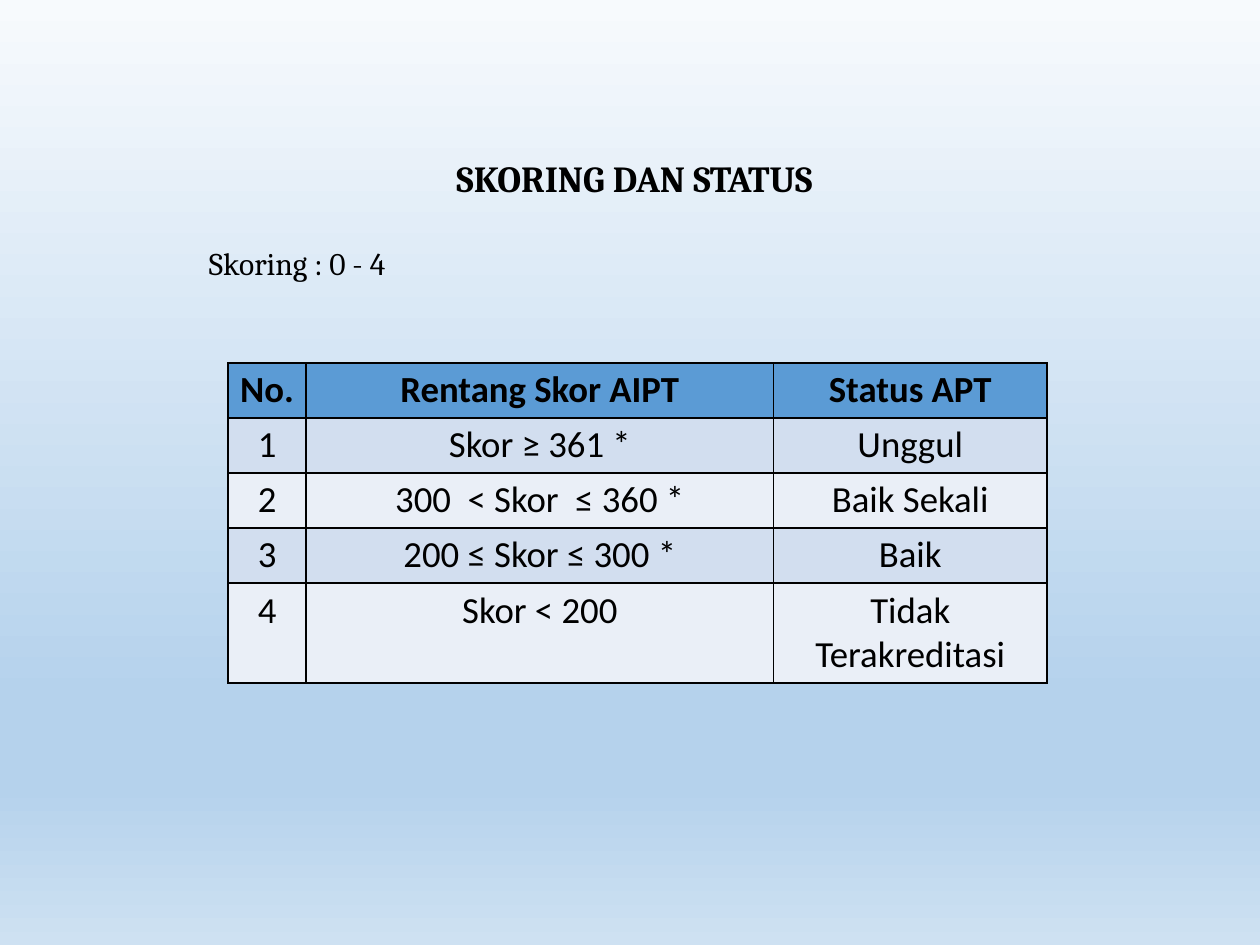
from typing import NamedTuple

from lxml import etree
from pptx import Presentation
from pptx.dml.color import RGBColor
from pptx.enum.text import MSO_AUTO_SIZE, PP_ALIGN
from pptx.oxml.ns import qn
from pptx.slide import Slide
from pptx.table import _Cell
from pptx.text.text import TextFrame
from pptx.util import Inches, Pt

LEFT, CENTER = PP_ALIGN.LEFT, PP_ALIGN.CENTER
FIT = MSO_AUTO_SIZE.SHAPE_TO_FIT_TEXT

BLACK = RGBColor(0x00, 0x00, 0x00)
BLUE = RGBColor(0x5B, 0x9B, 0xD5)
BANDS = (RGBColor(0xD2, 0xDE, 0xEF), RGBColor(0xEA, 0xEF, 0xF7))
SKY = RGBColor(0xB5, 0xD2, 0xEC)
STOPS = (
    (0, RGBColor(0xF7, 0xFA, 0xFD)),
    (74, SKY),
    (83, SKY),
    (100, RGBColor(0xCE, 0xE1, 0xF2)),
)

WIDTHS = (0.62, 3.71, 2.17)
HEIGHTS = (0.42, 0.42, 0.42, 0.42, 0.78)
ROWS = (
    ("No.", "Rentang Skor AIPT", "Status APT"),
    ("1", "Skor ≥ 361 *", "Unggul"),
    ("2", "300  < Skor  ≤ 360 *", "Baik Sekali"),
    ("3", "200 ≤ Skor ≤ 300 *", "Baik"),
    ("4", "Skor < 200", "Tidak Terakreditasi"),
)


class Label(NamedTuple):
    text: str
    left: float
    top: float
    width: float
    height: float
    size: float
    bold: bool
    align: PP_ALIGN


LABELS = (
    Label("Skoring : 0 - 4", 1.56, 1.89, 7, 0.4, 18, False, LEFT),
    Label("SKORING DAN STATUS", 1.44, 1.19, 7.19, 0.45, 21, True, CENTER),
)


def write(frame: TextFrame, text: str, *, font: str, size: float = 21,
          bold: bool = False, align: PP_ALIGN = CENTER) -> None:
    para = frame.paragraphs[0]
    para.alignment = align
    run = para.add_run()
    run.text = text
    run.font.name = font
    run.font.size = Pt(size)
    run.font.bold = bold
    run.font.color.rgb = BLACK


def add_color(parent: etree._Element, color: RGBColor) -> None:
    etree.SubElement(parent, qn("a:srgbClr"), val=str(color))


def paint_back(slide: Slide) -> None:
    fill = slide.background.fill
    fill.gradient()
    fill.gradient_angle = 270
    stops = slide.element.find(".//" + qn("a:gsLst"))
    for old in list(stops):
        stops.remove(old)
    for place, color in STOPS:
        add_color(etree.SubElement(stops, qn("a:gs"), pos=str(place * 1000)), color)


def set_border(cell: _Cell) -> None:
    """Rule all four sides; the lines must come before the cell's fill."""
    props = cell._tc.get_or_add_tcPr()
    for index, side in enumerate(("lnL", "lnR", "lnT", "lnB")):
        line = etree.Element(qn(f"a:{side}"), w=str(Pt(1)))
        add_color(etree.SubElement(line, qn("a:solidFill")), BLACK)
        props.insert(index, line)


def draw_table(slide: Slide) -> None:
    table = slide.shapes.add_table(
        len(ROWS), len(WIDTHS), Inches(1.81), Inches(2.88),
        Inches(sum(WIDTHS)), Inches(sum(HEIGHTS))).table
    for col, width in zip(table.columns, WIDTHS):
        col.width = Inches(width)
    for row, height in zip(table.rows, HEIGHTS):
        row.height = Inches(height)
    for r, texts in enumerate(ROWS):
        for c, text in enumerate(texts):
            cell = table.cell(r, c)
            cell.margin_left = cell.margin_right = Inches(0.07)
            cell.margin_top = cell.margin_bottom = Inches(0.04)
            cell.fill.solid()
            cell.fill.fore_color.rgb = BANDS[(r - 1) % 2] if r else BLUE
            set_border(cell)
            write(cell.text_frame, text, font="Calibri", bold=r == 0)


def draw_label(slide: Slide, label: Label) -> None:
    box = slide.shapes.add_textbox(
        Inches(label.left), Inches(label.top),
        Inches(label.width), Inches(label.height))
    frame = box.text_frame
    frame.word_wrap = True
    frame.auto_size = FIT
    write(frame, label.text, font="Cambria", size=label.size,
          bold=label.bold, align=label.align)


def main() -> None:
    deck = Presentation()
    deck.slide_width, deck.slide_height = Inches(10), Inches(7.5)
    slide = deck.slides.add_slide(deck.slide_layouts[6])
    paint_back(slide)
    draw_table(slide)
    for label in LABELS:
        draw_label(slide, label)
    deck.save("out.pptx")


if __name__ == "__main__":
    main()
